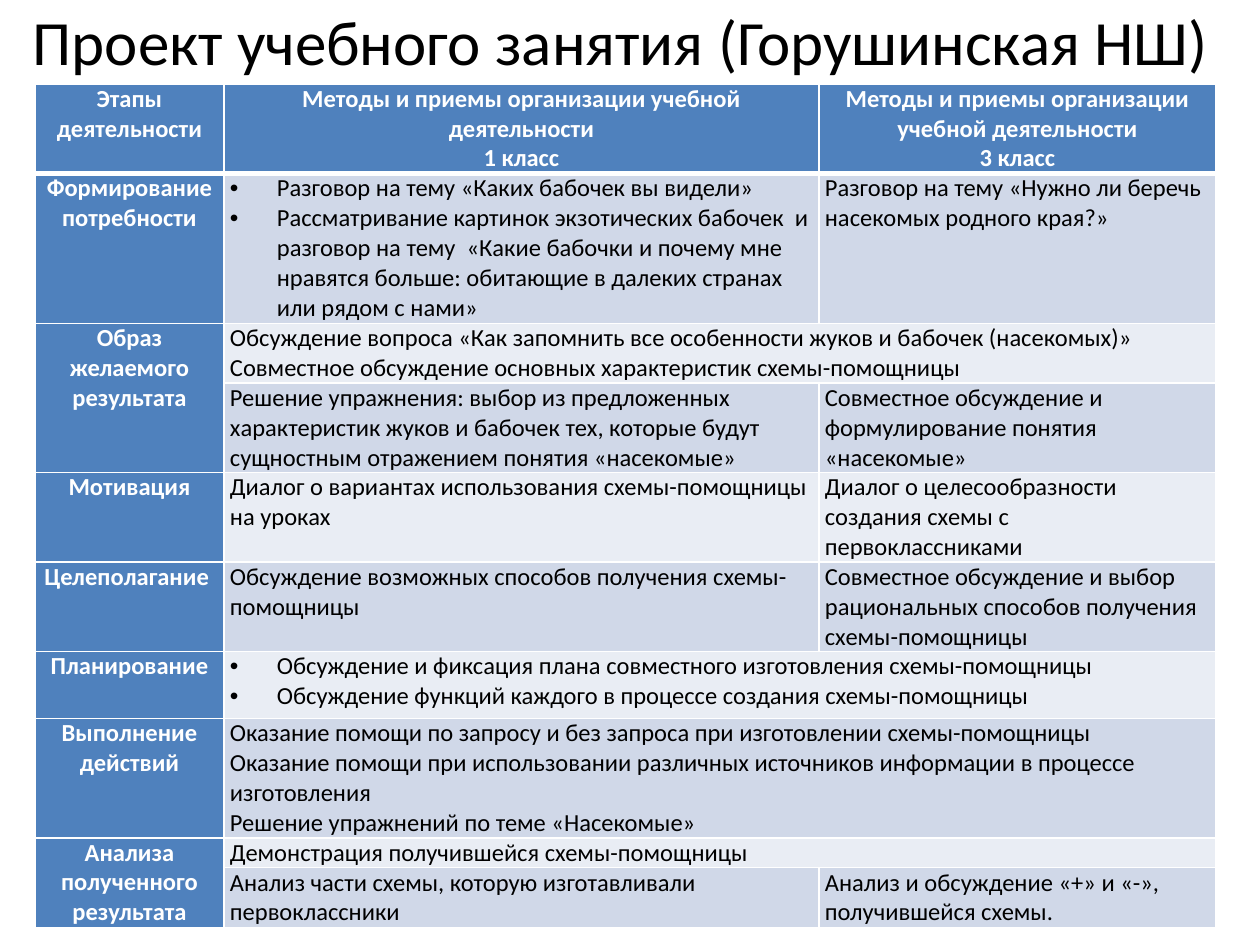
from dataclasses import dataclass
from lxml.etree import SubElement
from pptx import Presentation
from pptx.dml.color import RGBColor
from pptx.enum.text import MSO_ANCHOR as Anchor, MSO_AUTO_SIZE as AutoSize, PP_ALIGN as Align
from pptx.oxml.ns import qn
from pptx.util import Emu, Pt

PX = 914400 // 126
BLUE, WHITE, BLACK = "4F81BD", "FFFFFF", "000000"
BANDS = ["D0D8E8", "E9EDF4"]
COLUMNS = [189, 595, 397]
INSET, INDENT = 6, 47


@dataclass
class Row:
    height: int
    stage: str | None
    first: str
    third: str | None = None
    bullets: bool = False


ROWS = [
    Row(78, "Этапы деятельности",
        "Методы и приемы организации учебной деятельности\n1 класс",
        "Методы и приемы организации учебной деятельности\n3 класс"),
    Row(150, "Формирование потребности",
        "Разговор на тему «Каких бабочек вы видели»\n"
        "Рассматривание картинок экзотических бабочек  и разговор на тему  «Какие бабочки "
        "и почему мне нравятся больше: обитающие в далеких странах или рядом с нами»",
        "Разговор на тему «Нужно ли беречь насекомых родного края?»", bullets=True),
    Row(50, "Образ желаемого результата",
        "Обсуждение вопроса «Как запомнить все особенности жуков и бабочек (насекомых)»\n"
        "Совместное обсуждение основных характеристик схемы-помощницы"),
    Row(83, None,
        "Решение упражнения: выбор из предложенных характеристик жуков и бабочек тех, "
        "которые будут сущностным отражением понятия «насекомые»",
        "Совместное обсуждение и формулирование понятия «насекомые»"),
    Row(78, "Мотивация",
        "Диалог о вариантах использования схемы-помощницы на уроках",
        "Диалог о целесообразности создания схемы с первоклассниками"),
    Row(78, "Целеполагание ",
        "Обсуждение возможных способов получения схемы-помощницы",
        "Совместное обсуждение и выбор рациональных способов получения схемы-помощницы"),
    Row(67, "Планирование",
        "Обсуждение и фиксация плана совместного изготовления схемы-помощницы\n"
        "Обсуждение функций каждого в процессе создания схемы-помощницы", bullets=True),
    Row(105, "Выполнение действий",
        "Оказание помощи по запросу и без запроса при изготовлении схемы-помощницы\n"
        "Оказание помощи при использовании различных источников информации "
        "в процессе изготовления\n"
        "Решение упражнений по теме «Насекомые»"),
    Row(26, "Анализа полученного результата", "Демонстрация получившейся схемы-помощницы"),
    Row(52, None,
        "Анализ части схемы, которую изготавливали первоклассники",
        "Анализ и обсуждение «+» и «-», получившейся схемы."),
]


def px(length):
    return Emu(length * PX)


def color(value):
    return RGBColor.from_string(value)


def add_bullet(para):
    props = para._p.get_or_add_pPr()
    props.set("marL", str(px(INDENT)))
    props.set("indent", str(px(-INDENT)))
    SubElement(props, qn("a:buFont")).set("typeface", "Arial")
    SubElement(props, qn("a:buChar")).set("char", "•")


def write(frame, text, size=14, fill=BLACK, bold=False, align=Align.LEFT, bullets=False):
    for index, line in enumerate(text.split("\n")):
        para = frame.add_paragraph() if index else frame.paragraphs[0]
        para.alignment = align
        if bullets:
            add_bullet(para)
        span = para.add_run()
        span.text = line
        span.font.name = "Calibri"
        span.font.size = Pt(size)
        span.font.bold = bold
        span.font.color.rgb = color(fill)


def style_cell(cell, fill, bottom=1):
    cell.margin_left = cell.margin_right = px(INSET)
    cell.margin_top = cell.margin_bottom = 0
    cell.vertical_anchor = Anchor.TOP
    props = cell._tc.get_or_add_tcPr()
    for side, width in (("L", 1), ("R", 1), ("T", 1), ("B", bottom)):
        line = SubElement(props, qn(f"a:ln{side}"))
        line.set("w", str(Pt(width)))
        SubElement(SubElement(line, qn("a:solidFill")), qn("a:srgbClr")).set("val", WHITE)
    cell.fill.solid()
    cell.fill.fore_color.rgb = color(fill)


def place_title(page, left, top, width, height):
    title = page.shapes.title
    title.left, title.top, title.width, title.height = map(px, (left, top, width, height))
    frame = title.text_frame
    frame.word_wrap = True
    frame.auto_size = AutoSize.NONE
    frame.vertical_anchor = Anchor.MIDDLE
    write(frame, "Проект учебного занятия (Горушинская НШ)", size=36, align=Align.CENTER)


def place_plan(page, left, top):
    height = sum(row.height for row in ROWS)
    box = page.shapes.add_table(len(ROWS), len(COLUMNS), px(left), px(top),
                                px(sum(COLUMNS)), px(height))
    table = box.table
    for column, width in zip(table.columns, COLUMNS):
        column.width = px(width)
    heading = {"fill": WHITE, "bold": True, "align": Align.CENTER}
    for index, row in enumerate(ROWS):
        table.rows[index].height = px(row.height)
        header = index == 0
        band = BLUE if header else BANDS[(index - 1) % 2]
        stage, first, third = (table.cell(index, column) for column in range(3))
        for cell, fill in ((stage, BLUE), (first, band), (third, band)):
            style_cell(cell, fill, bottom=3 if header else 1)
        if row.stage:
            write(stage.text_frame, row.stage, **heading)
        else:
            table.cell(index - 1, 0).merge(stage)
        body = heading if header else {}
        write(first.text_frame, row.first, bullets=row.bullets, **body)
        if row.third:
            write(third.text_frame, row.third, **body)
        else:
            first.merge(third)


def main():
    deck = Presentation()
    deck.slide_width, deck.slide_height = px(1260), px(945)
    page = deck.slides.add_slide(deck.slide_layouts[5])
    place_title(page, 15, 16, 1211, 49)
    place_plan(page, 35, 84)
    deck.save("out.pptx")


if __name__ == "__main__":
    main()
